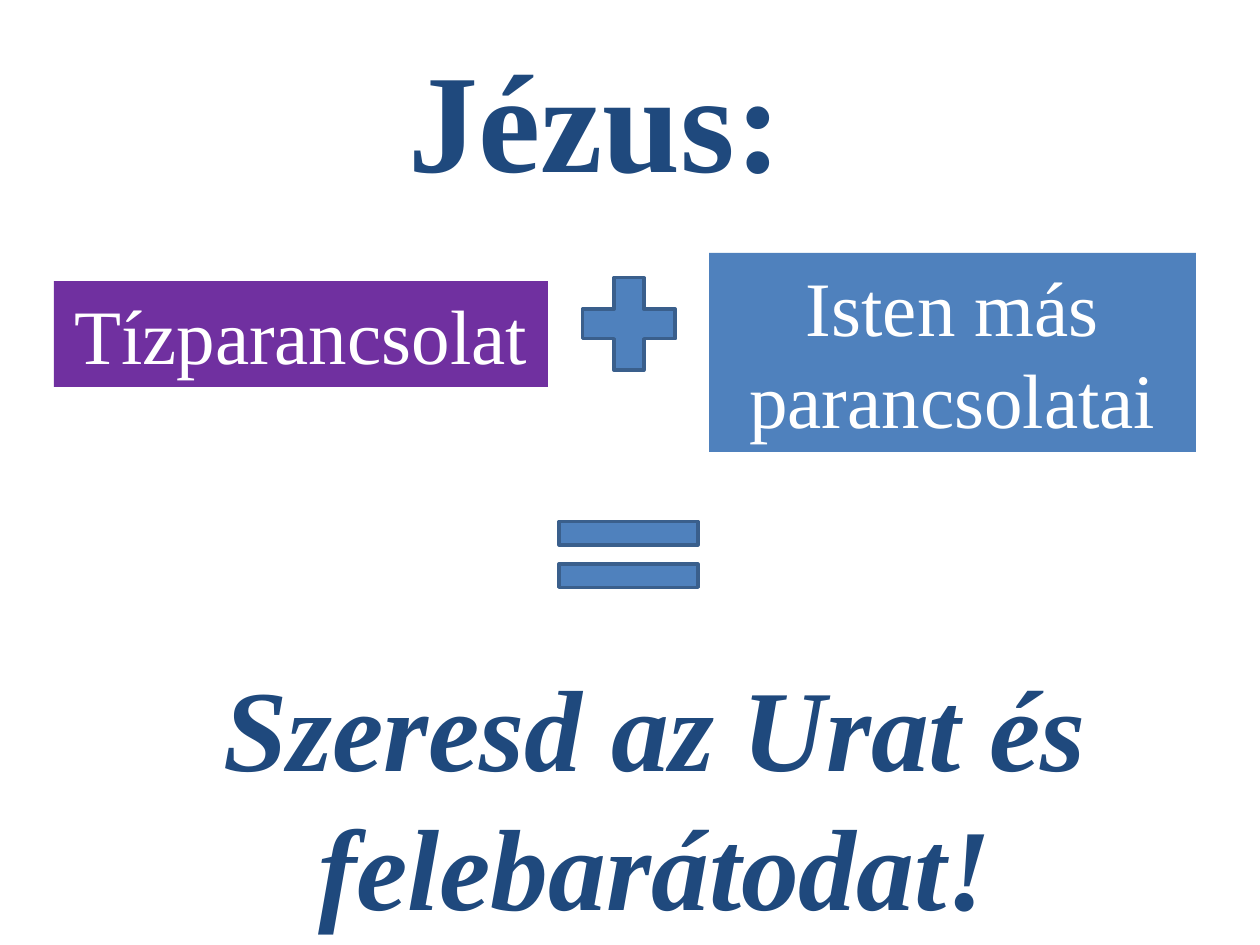
from pptx import Presentation
from pptx.dml.color import RGBColor
from pptx.enum.shapes import MSO_SHAPE as Shape
from pptx.enum.text import MSO_ANCHOR as Anchor, MSO_AUTO_SIZE as AutoSize, PP_ALIGN as Align
from pptx.util import Emu, Pt

EMU_PER_PX = 914400 / 126
NAVY, BLUE, EDGE, PURPLE, WHITE = "1F497D", "4F81BD", "3A5F8C", "7030A0", "FFFFFF"


def px(length):
    return Emu(round(length * EMU_PER_PX))


def color(value):
    return RGBColor.from_string(value)


class SlideBuilder:
    font_name = "Times New Roman"

    def __init__(self, slide):
        self.slide = slide

    def set_text(self, shape, text, size, text_color, bold=False, italic=False):
        frame = shape.text_frame
        frame.text = text
        frame.word_wrap = True
        frame.auto_size = AutoSize.SHAPE_TO_FIT_TEXT
        frame.vertical_anchor = Anchor.TOP
        paragraph = frame.paragraphs[0]
        paragraph.alignment = Align.CENTER
        font = paragraph.font
        font.name, font.size = self.font_name, Pt(size)
        font.bold, font.italic = bold, italic
        font.color.rgb = color(text_color)

    def title(self, text, box, size):
        shape = self.slide.shapes.title
        shape.left, shape.top, shape.width, shape.height = map(px, box)
        self.set_text(shape, text, size, NAVY, bold=True)

    def text(self, text, box, size):
        shape = self.slide.shapes.add_textbox(*map(px, box))
        self.set_text(shape, text, size, NAVY, bold=True, italic=True)

    def filled(self, kind, box, fill):
        shape = self.slide.shapes.add_shape(kind, *map(px, box))
        shape.shadow.inherit = False
        shape.fill.solid()
        shape.fill.fore_color.rgb = color(fill)
        return shape

    def label(self, text, box, fill):
        shape = self.filled(Shape.RECTANGLE, box, fill)
        shape.line.fill.background()
        self.set_text(shape, text, 44, WHITE)

    def sign(self, kind, box, adjustments=()):
        shape = self.filled(kind, box, BLUE)
        shape.line.color.rgb = color(EDGE)
        shape.line.width = Pt(2)
        for index, value in enumerate(adjustments):
            shape.adjustments[index] = value


def main():
    presentation = Presentation()
    presentation.slide_width, presentation.slide_height = px(1260), px(945)
    title_only = presentation.slide_layouts[5]
    builder = SlideBuilder(presentation.slides.add_slide(title_only))

    # Heading
    builder.title("Jézus:", (392, 26, 407, 183), 80)

    # The two groups of commandments, added together
    builder.label("Tízparancsolat", (54, 281, 494, 106), PURPLE)
    builder.label("Isten más parancsolatai", (709, 253, 487, 199), BLUE)
    builder.sign(Shape.MATH_PLUS, (566, 261, 126, 126))

    # Their sum
    builder.text("Szeresd az Urat és felebarátodat!", (184, 650, 942, 292), 66)
    builder.sign(Shape.MATH_EQUAL, (534, 505, 189, 99), (0.235, 0.195))

    presentation.save("out.pptx")


if __name__ == "__main__":
    main()
